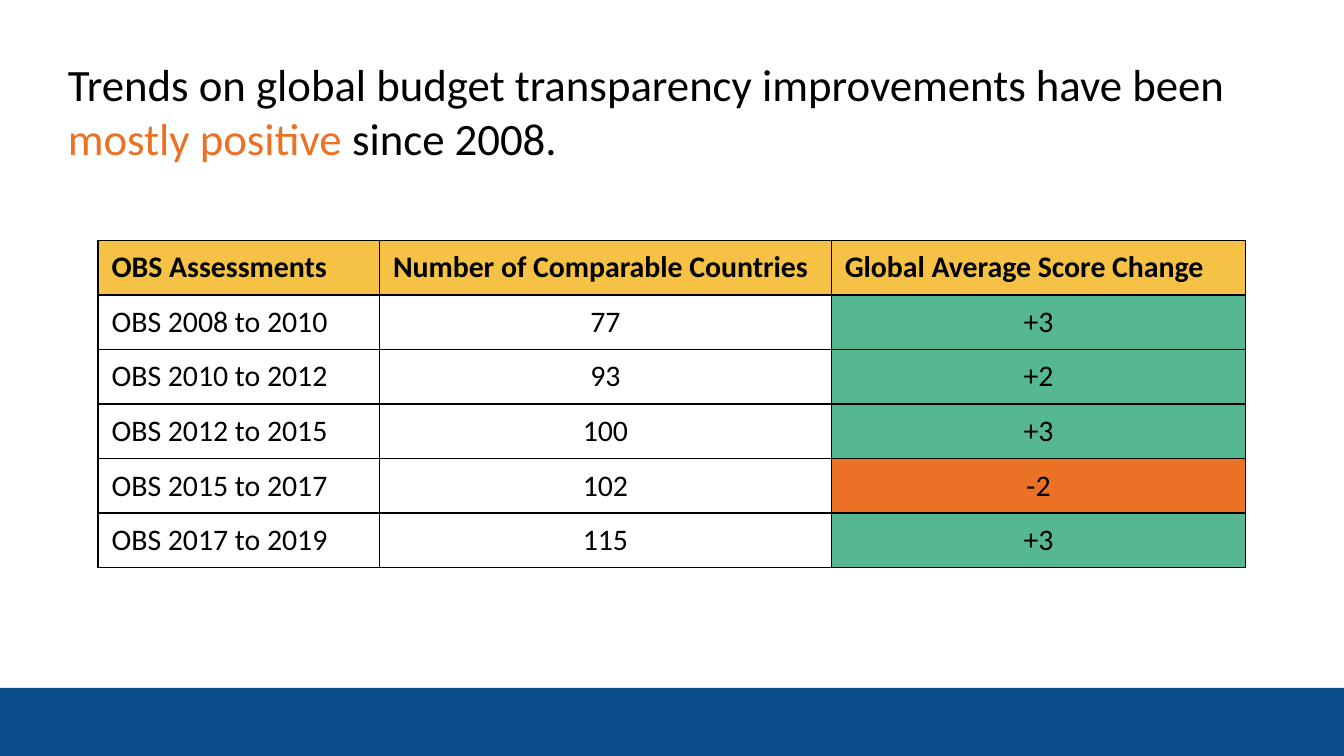
from lxml.etree import SubElement
from pptx import Presentation
from pptx.dml.color import RGBColor
from pptx.enum.shapes import MSO_SHAPE as Shape
from pptx.enum.text import MSO_ANCHOR as Anchor, PP_ALIGN as Align
from pptx.oxml.ns import qn
from pptx.util import Pt

BLACK, WHITE, BLUE = "000000", "FFFFFF", "094C89"
ORANGE, YELLOW, GREEN = "EB7225", "F5C245", "56B890"

TITLE = [
    ("Trends on global budget transparency improvements have been ", BLACK),
    ("mostly positive ", ORANGE),
    ("since 2008.", BLACK),
]
HEADERS = ["OBS Assessments", "Number of Comparable Countries", "Global Average Score Change"]
ASSESSMENTS = [
    ("OBS 2008 to 2010", 77, 3),
    ("OBS 2010 to 2012", 93, 2),
    ("OBS 2012 to 2015", 100, 3),
    ("OBS 2015 to 2017", 102, -2),
    ("OBS 2017 to 2019", 115, 3),
]
COLUMN_WIDTHS = [150.75, 242, 222]


def paint(target, color):
    """Give a fill or a font a solid colour."""
    if hasattr(target, "solid"):
        target.solid()
        target.fore_color.rgb = RGBColor.from_string(color)
    else:
        target.color.rgb = RGBColor.from_string(color)


def style(font, color, **formats):
    """Set the typeface, colour and further formats of a font."""
    for key, value in {"name": "Calibri", **formats}.items():
        setattr(font, key, value)
    paint(font, color)


def add_footer(slide, left, top, width, height):
    """Draw the blue band at the foot of the slide."""
    band = slide.shapes.add_shape(Shape.RECTANGLE, Pt(left), Pt(top), Pt(width), Pt(height))
    band.shadow.inherit = False
    paint(band.fill, BLUE)
    band.line.fill.background()


def add_title(slide, left, top, width, height):
    """Write the headline with its coloured phrase on the second line."""
    frame = slide.shapes.add_textbox(Pt(left), Pt(top), Pt(width), Pt(height)).text_frame
    frame.word_wrap = True
    headline = frame.paragraphs[0]
    for index, (words, color) in enumerate(TITLE):
        if index == 1:
            headline.add_line_break()
        phrase = headline.add_run()
        phrase.text = words
        style(phrase.font, color, size=Pt(24))


def add_borders(cell):
    """Draw a thin black line on every side of a cell."""
    properties = cell._tc.get_or_add_tcPr()
    for side in ("a:lnL", "a:lnR", "a:lnT", "a:lnB"):
        border = SubElement(properties, qn(side), w=str(Pt(1)))
        SubElement(SubElement(border, qn("a:solidFill")), qn("a:srgbClr"), val=BLACK)


def fill_cell(cell, words, color, align, bold):
    """Write one table cell with its borders, fill and alignment."""
    add_borders(cell)
    if color:
        paint(cell.fill, color)
    else:
        cell.fill.background()
    cell.vertical_anchor = Anchor.MIDDLE
    cell.text = words
    paragraph = cell.text_frame.paragraphs[0]
    paragraph.alignment = align
    style(paragraph.runs[0].font, BLACK, size=Pt(16), bold=bold)


def add_score_table(slide, left, top, width, height):
    """Build the table of assessments, with score changes coloured by sign."""
    row_count = len(ASSESSMENTS) + 1
    table = slide.shapes.add_table(
        row_count, len(HEADERS), Pt(left), Pt(top), Pt(width), Pt(height)
    ).table
    for column, share in zip(table.columns, COLUMN_WIDTHS):
        column.width = Pt(width * share / sum(COLUMN_WIDTHS))
    for row in table.rows:
        row.height = Pt(height / row_count)
    for column, header in enumerate(HEADERS):
        fill_cell(table.cell(0, column), header, YELLOW, Align.LEFT, True)
    for row, (period, countries, change) in enumerate(ASSESSMENTS, 1):
        change_color = GREEN if change > 0 else ORANGE
        fill_cell(table.cell(row, 0), period, None, Align.LEFT, False)
        fill_cell(table.cell(row, 1), str(countries), None, Align.CENTER, False)
        fill_cell(table.cell(row, 2), f"{change:+d}", change_color, Align.CENTER, False)


def main():
    """Build the slide and save it."""
    deck = Presentation()
    deck.slide_width, deck.slide_height = Pt(720), Pt(405)
    slide = deck.slides.add_slide(deck.slide_layouts[6])
    paint(slide.background.fill, WHITE)
    add_footer(slide, 0, 368.5, 720, 36.5)
    add_title(slide, 29.25, 26.75, 662, 65.5)
    add_score_table(slide, 52.6, 128.75, 614.75, 175.5)
    deck.save("out.pptx")


if __name__ == "__main__":
    main()
